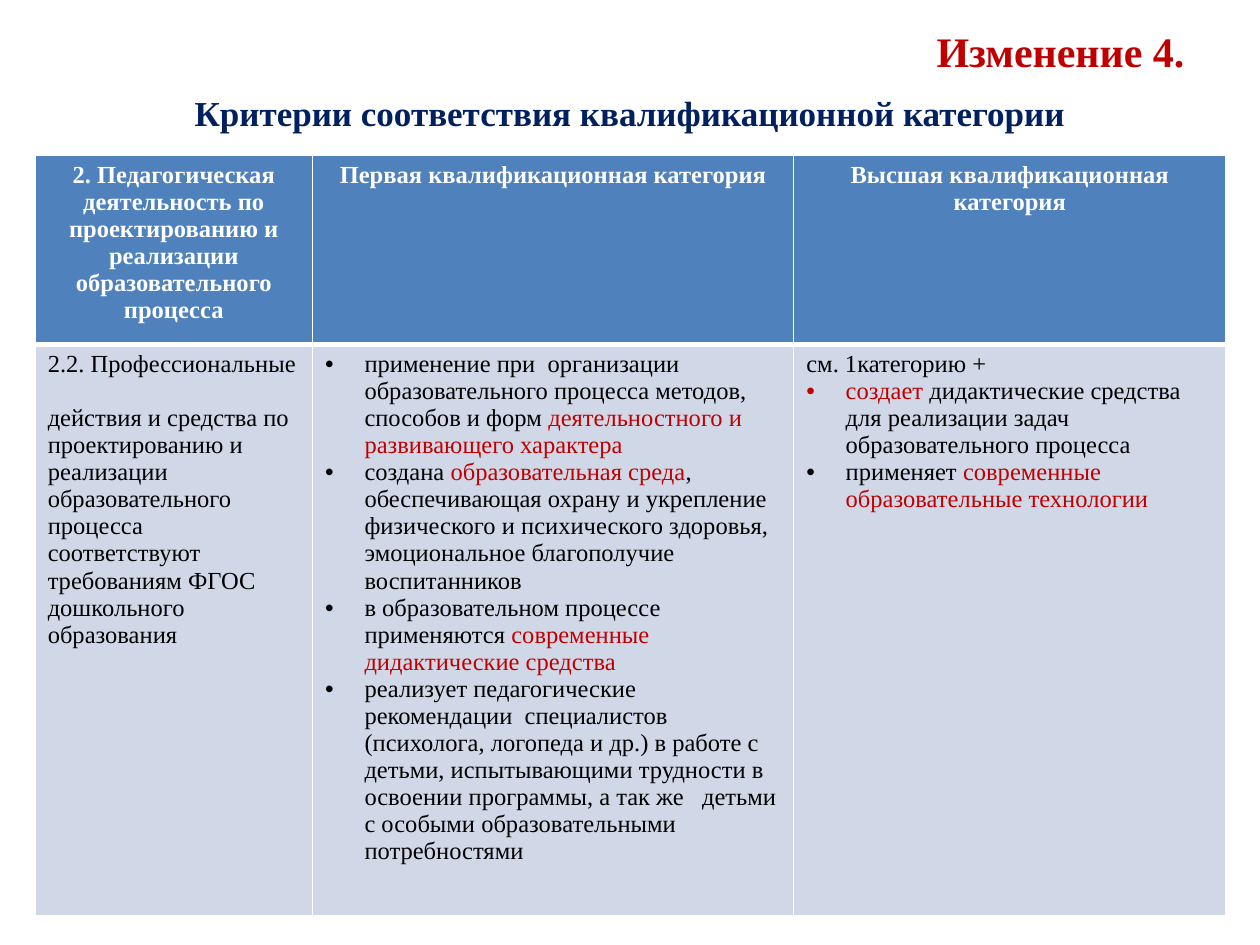
from lxml.etree import SubElement
from pptx import Presentation
from pptx.dml.color import RGBColor
from pptx.enum.text import MSO_ANCHOR, PP_ALIGN
from pptx.oxml.ns import qn
from pptx.util import Pt

FONT = "Times New Roman"
WHITE = RGBColor(0xFF, 0xFF, 0xFF)
BLACK = RGBColor(0, 0, 0)
RED = RGBColor(0xC0, 0x00, 0x00)
NAVY = RGBColor(0x00, 0x20, 0x60)
HEADER_FILL = RGBColor(0x4F, 0x81, 0xBD)
BODY_FILL = RGBColor(0xD0, 0xD8, 0xE8)

# text, top, height, size, colour, alignment, anchor, space before
HEADINGS = [
    ("Изменение 4.", 9.4, 39.6, 24, RED, PP_ALIGN.RIGHT, MSO_ANCHOR.MIDDLE, 0),
    ("Критерии соответствия квалификационной категории",
     49, 36, 20, NAVY, PP_ALIGN.CENTER, MSO_ANCHOR.TOP, 4),
]

HEADER = [
    "2. Педагогическая деятельность по проектированию и реализации образовательного процесса",
    "Первая квалификационная категория",
    "Высшая квалификационная категория",
]

# Each paragraph: (bulleted, space before, runs); text between asterisks is red
BODY = [
    [
        (False, 0, "2.2. Профессиональные"),
        (False, 15.5, "действия и средства по проектированию и реализации "
                      "образовательного процесса"),
        (False, 0, "соответствуют требованиям ФГОС дошкольного образования"),
    ],
    [
        (True, 0, "применение при  организации образовательного процесса методов, "
                  "способов и форм *деятельностного и  развивающего характера*"),
        (True, 0, "создана *образовательная среда*, обеспечивающая охрану и укрепление "
                  "физического и психического здоровья, эмоциональное благополучие "
                  "воспитанников"),
        (True, 0, "в образовательном процессе применяются "
                  "*современные дидактические средства*"),
        (True, 0, "реализует педагогические рекомендации  специалистов (психолога, "
                  "логопеда и др.) в работе с детьми, испытывающими трудности в освоении "
                  "программы, а так же   детьми с особыми образовательными потребностями"),
    ],
    [
        (False, 0, "см. 1категорию +"),
        (True, 0, "*создает* дидактические средства для реализации задач  "
                  "образовательного процесса"),
        (True, 0, "применяет *современные образовательные технологии*"),
    ],
]

TABLE_LEFT, TABLE_TOP = 20.1, 88.6
COLUMN_WIDTHS = [158.5, 275, 247]
ROW_HEIGHTS = [99.5, 301]
TEXT_SIZE = 14
BULLET_INDENT = 22.5


def add_run(p, text, size, color, bold=False):
    r = p.add_run()
    r.text = text
    r.font.name = FONT
    r.font.size = Pt(size)
    r.font.bold = bold
    r.font.color.rgb = color


def add_bullet(p):
    pPr = p._p.get_or_add_pPr()
    pPr.set("marL", str(Pt(BULLET_INDENT)))
    pPr.set("indent", str(-Pt(BULLET_INDENT)))
    SubElement(pPr, qn("a:buFont"), typeface="Arial")
    SubElement(pPr, qn("a:buChar"), char="•")


def style_cell(cell, fill, top, bottom):
    """Set white borders (top and bottom widths in points), then the fill."""
    tcPr = cell._tc.get_or_add_tcPr()
    for side, width in (("L", 1), ("R", 1), ("T", top), ("B", bottom)):
        ln = SubElement(tcPr, qn(f"a:ln{side}"), w=str(Pt(width)))
        SubElement(SubElement(ln, qn("a:solidFill")), qn("a:srgbClr"), val=str(WHITE))
    cell.fill.solid()
    cell.fill.fore_color.rgb = fill


def add_heading(s, text, top, height, size, color, align, anchor, before):
    tf = s.shapes.add_textbox(Pt(36), Pt(top), Pt(648), Pt(height)).text_frame
    tf.word_wrap = True
    tf.vertical_anchor = anchor
    p = tf.paragraphs[0]
    p.alignment = align
    p.space_before = Pt(before)
    add_run(p, text, size, color, bold=True)


def add_criteria_table(s):
    table = s.shapes.add_table(
        len(ROW_HEIGHTS), len(COLUMN_WIDTHS), Pt(TABLE_LEFT), Pt(TABLE_TOP),
        Pt(sum(COLUMN_WIDTHS)), Pt(sum(ROW_HEIGHTS))).table
    for column, width in zip(table.columns, COLUMN_WIDTHS):
        column.width = Pt(width)
    for row, height in zip(table.rows, ROW_HEIGHTS):
        row.height = Pt(height)

    for col, (title, paragraphs) in enumerate(zip(HEADER, BODY)):
        cell = table.cell(0, col)
        style_cell(cell, HEADER_FILL, 1, 3)
        p = cell.text_frame.paragraphs[0]
        p.alignment = PP_ALIGN.CENTER
        add_run(p, title, TEXT_SIZE, WHITE, bold=True)

        cell = table.cell(1, col)
        style_cell(cell, BODY_FILL, 3, 1)
        tf = cell.text_frame
        for i, (bulleted, before, text) in enumerate(paragraphs):
            p = tf.add_paragraph() if i else tf.paragraphs[0]
            if before:
                p.space_before = Pt(before)
            if bulleted:
                add_bullet(p)
            for j, part in enumerate(text.split("*")):
                if part:
                    add_run(p, part, TEXT_SIZE, RED if j % 2 else BLACK)


def main():
    prs = Presentation()
    prs.slide_width, prs.slide_height = Pt(720), Pt(540)
    s = prs.slides.add_slide(prs.slide_layouts[6])
    for heading in HEADINGS:
        add_heading(s, *heading)
    add_criteria_table(s)
    prs.save("out.pptx")


if __name__ == "__main__":
    main()
